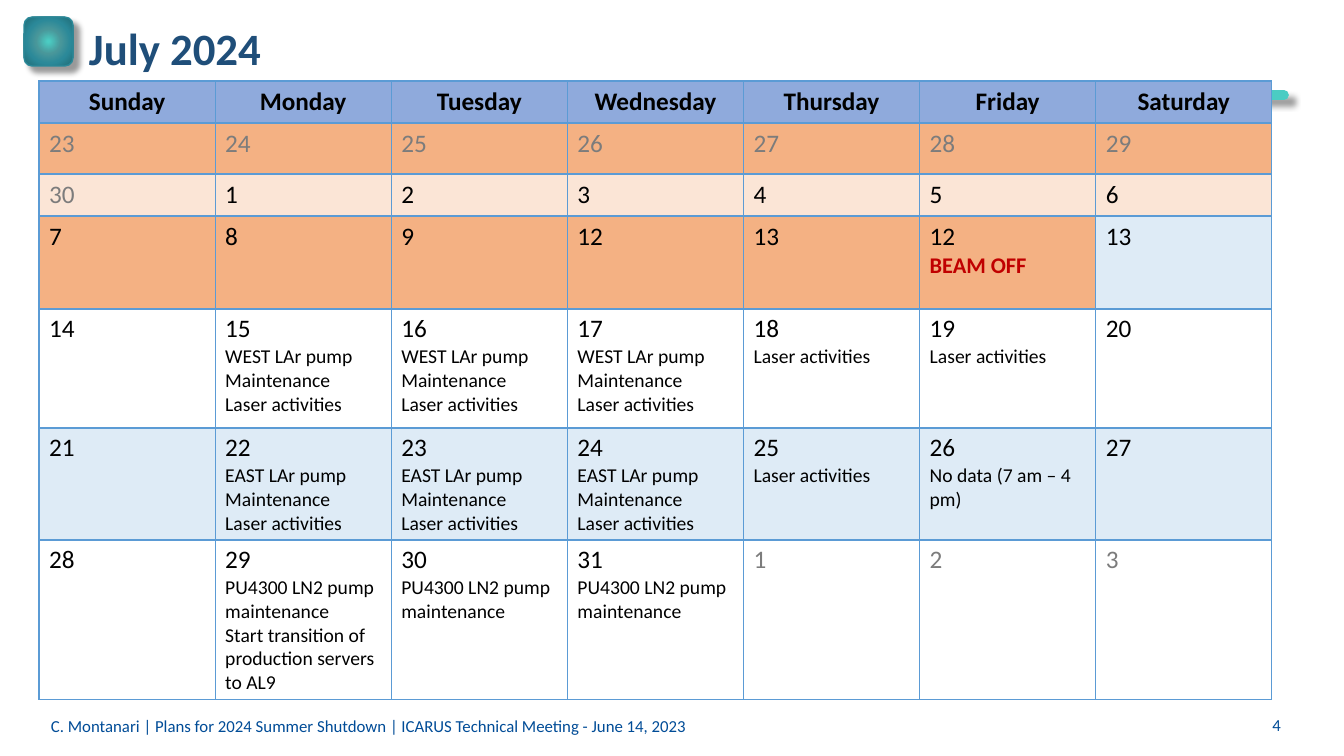
import pptx
import pptx.dml.color
import pptx.enum.shapes
import pptx.enum.text
import pptx.oxml
import pptx.oxml.ns
import pptx.util
import lxml.etree

RGBColor = pptx.dml.color.RGBColor
Align = pptx.enum.text.PP_ALIGN
Anchor = pptx.enum.text.MSO_ANCHOR

NAVY = RGBColor(0x1F, 0x4E, 0x79)
FOOTER_BLUE = RGBColor(0x00, 0x4C, 0x97)
TEAL = RGBColor(0x2B, 0x89, 0x99)
AQUA = RGBColor(0x4B, 0xCC, 0xC3)
BLACK = RGBColor(0x00, 0x00, 0x00)
GREY = RGBColor(0x7C, 0x7C, 0x7C)
RED = RGBColor(0xC0, 0x00, 0x00)
HEADER_BLUE = RGBColor(0x8F, 0xAA, 0xDC)
BLUE = RGBColor(0x5B, 0x9B, 0xD5)
ORANGE = RGBColor(0xF4, 0xB1, 0x83)
PEACH = RGBColor(0xFB, 0xE5, 0xD6)

PX = 914400 / 100.8
SLIDE_SIZE = (1344, 756)
TABLE_BOX = (39, 81, 1233, 619)
BADGE_BOX = (24, 17, 49, 49)
TITLE_LINE = (48, 95, 1284, 95)
HEADER_HEIGHT = 42

WEEKDAYS = ["Sunday", "Monday", "Tuesday", "Wednesday", "Thursday", "Friday", "Saturday"]
WEST = ["WEST LAr pump Maintenance", "Laser activities"]
EAST = ["EAST LAr pump Maintenance", "Laser activities"]
LASER = ["Laser activities"]
NITROGEN = ["PU4300 LN2 pump maintenance"]
SERVERS = ["Start transition of production servers to AL9"]
BEAM_OFF = "BEAM OFF"

WEEKS = [
    (51, ORANGE, [23, 24, 25, 26, 27, 28, 29]),
    (42, PEACH, [30, 1, 2, 3, 4, 5, 6]),
    (93, ORANGE, [7, 8, 9, 12, 13, 12, 13]),
    (119, None, [14, 15, 16, 17, 18, 19, 20]),
    (112, BLUE, [21, 22, 23, 24, 25, 26, 27]),
    (160, None, [28, 29, 30, 31, 1, 2, 3]),
]
EVENTS = {
    (2, 5): [BEAM_OFF],
    (3, 1): WEST, (3, 2): WEST, (3, 3): WEST, (3, 4): LASER, (3, 5): LASER,
    (4, 1): EAST, (4, 2): EAST, (4, 3): EAST, (4, 4): LASER,
    (4, 5): ["No data (7 am – 4 pm)"],
    (5, 1): NITROGEN + SERVERS, (5, 2): NITROGEN, (5, 3): NITROGEN,
}
FILL_CHANGES = {(2, 6): BLUE}
JULY_POSITIONS = range(8, 39)

TEXTS = [
    ("4", (1221, 715, 60, 27), 0, Align.RIGHT, Anchor.TOP,
     {"size": 12, "color": FOOTER_BLUE, "bold": False}),
    ("C. Montanari | Plans for 2024 Summer Shutdown | ICARUS Technical Meeting - June 14, 2023",
     (51, 716, 906, 26), 0, Align.LEFT, Anchor.TOP,
     {"size": 12, "color": FOOTER_BLUE, "bold": False}),
    ("July 2024", (79, 21, 1265, 54), 10, Align.LEFT, Anchor.MIDDLE,
     {"size": 32, "color": NAVY, "bold": True}),
]
HEADER_STYLE = {"size": 18, "color": BLACK, "bold": True}
EVENT_STYLE = {"size": 14, "color": BLACK, "bold": False}
ALERT_STYLE = {"size": 16, "color": RED, "bold": True}

NAMESPACE = pptx.oxml.ns.nsdecls("a")
BADGE_STOPS = [(3, "4BCCC3"), (36, "49979A"), (64, "2B8999"), (96, "216E79")]
BADGE_FILL = f"""<a:gradFill {NAMESPACE} rotWithShape="1"><a:gsLst>{"".join(
    f'<a:gs pos="{position * 1000}"><a:srgbClr val="{color}"/></a:gs>'
    for position, color in BADGE_STOPS)}</a:gsLst><a:path path="circle">
<a:fillToRect l="50000" t="50000" r="50000" b="50000"/></a:path></a:gradFill>"""
SHADOW = f"""<a:effectLst {NAMESPACE}><a:outerShdw blurRad="50800" dist="76200"
dir="2700000" algn="tl" rotWithShape="0"><a:srgbClr val="000000"><a:alpha val="40000"/>
</a:srgbClr></a:outerShdw></a:effectLst>"""


def emu(*lengths):
    return [round(length * PX) for length in lengths]


def write(paragraph, text, style, alignment=Align.LEFT):
    paragraph.alignment = alignment
    run = paragraph.add_run()
    run.text = text
    run.font.color.rgb = style["color"]
    font_values = {"name": "Calibri", "size": pptx.util.Pt(style["size"]), "bold": style["bold"]}
    for name, value in font_values.items():
        setattr(run.font, name, value)


def add_text(slide, text, box, inset, alignment, anchor, style):
    frame = slide.shapes.add_textbox(*emu(*box)).text_frame
    side, edge = emu(inset, inset / 2)
    frame_values = {"word_wrap": True, "vertical_anchor": anchor, "margin_left": side,
                    "margin_right": side, "margin_top": edge, "margin_bottom": edge}
    for name, value in frame_values.items():
        setattr(frame, name, value)
    write(frame.paragraphs[0], text, style, alignment)


def format_cell(cell, color, bottom_width=1):
    properties = cell._tc.get_or_add_tcPr()
    for side, width in {"L": 1, "R": 1, "T": 1, "B": bottom_width}.items():
        properties.append(pptx.oxml.parse_xml(
            f'<a:ln{side} {NAMESPACE} w="{width * 12700}"><a:solidFill>'
            f'<a:srgbClr val="{BLUE}"/></a:solidFill></a:ln{side}>'))
    if color is None:
        cell.fill.background()
        return
    cell.fill.solid()
    cell.fill.fore_color.rgb = color
    if color == BLUE:
        fill_color = properties.find(pptx.oxml.ns.qn("a:solidFill"))[0]
        lxml.etree.SubElement(fill_color, pptx.oxml.ns.qn("a:alpha"), val="20000")


def add_decoration(slide):
    badge = slide.shapes.add_shape(
        pptx.enum.shapes.MSO_SHAPE.ROUNDED_RECTANGLE, *emu(*BADGE_BOX))
    badge.line.color.rgb = TEAL
    badge.line.width = pptx.util.Pt(1)
    badge._element.spPr.insert(2, pptx.oxml.parse_xml(BADGE_FILL))
    title_line = slide.shapes.add_connector(
        pptx.enum.shapes.MSO_CONNECTOR.STRAIGHT, *emu(*TITLE_LINE))
    title_line.line.color.rgb = AQUA
    title_line.line.width = pptx.util.Pt(7)
    title_line.line._ln.set("cap", "rnd")
    for shape in (badge, title_line):
        shape._element.spPr.append(pptx.oxml.parse_xml(SHADOW))


def add_calendar(slide):
    table = slide.shapes.add_table(len(WEEKS) + 1, len(WEEKDAYS), *emu(*TABLE_BOX)).table
    table.first_row = False
    table.horz_banding = False
    for row, height in zip(table.rows, [HEADER_HEIGHT] + [week[0] for week in WEEKS]):
        row.height = emu(height)[0]
    for column, weekday in enumerate(WEEKDAYS):
        table.columns[column].width = emu(TABLE_BOX[2] / len(WEEKDAYS))[0]
        cell = table.cell(0, column)
        cell.vertical_anchor = Anchor.MIDDLE
        format_cell(cell, HEADER_BLUE, 2)
        write(cell.text_frame.paragraphs[0], weekday, HEADER_STYLE, Align.CENTER)
    for week, (height, color, days) in enumerate(WEEKS):
        for column, day in enumerate(days):
            cell = table.cell(week + 1, column)
            format_cell(cell, FILL_CHANGES.get((week, column), color))
            in_july = week * len(WEEKDAYS) + column in JULY_POSITIONS
            day_style = {"size": 18, "color": BLACK if in_july else GREY, "bold": False}
            write(cell.text_frame.paragraphs[0], str(day), day_style)
            for event in EVENTS.get((week, column), []):
                style = ALERT_STYLE if event == BEAM_OFF else EVENT_STYLE
                write(cell.text_frame.add_paragraph(), event, style)


def main():
    presentation = pptx.Presentation()
    presentation.slide_width, presentation.slide_height = emu(*SLIDE_SIZE)
    slide = presentation.slides.add_slide(presentation.slide_layouts[6])
    add_decoration(slide)
    for text in TEXTS:
        add_text(slide, *text)
    add_calendar(slide)
    presentation.save("out.pptx")


if __name__ == "__main__":
    main()
